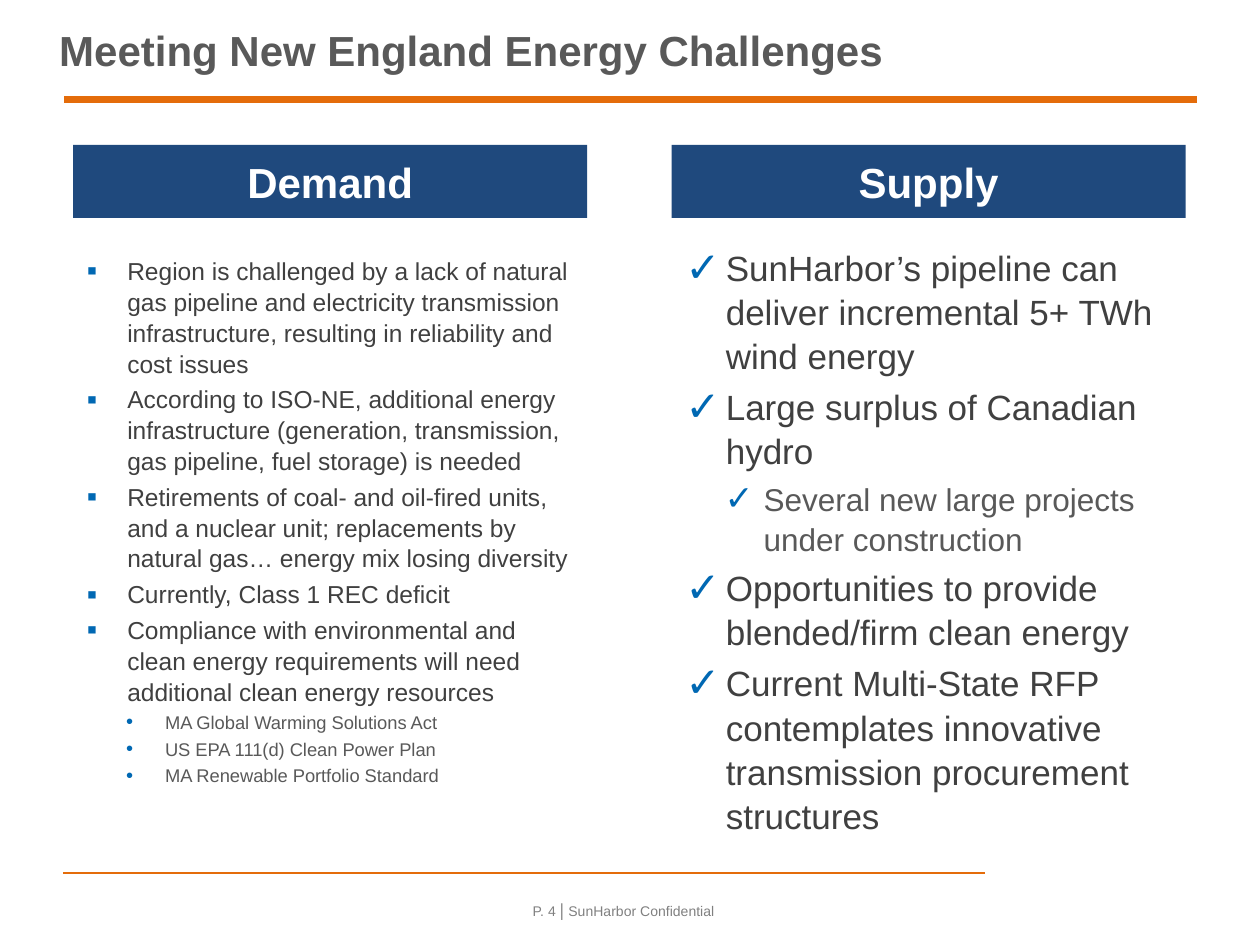
from lxml.etree import SubElement
from pptx import Presentation
from pptx.dml.color import RGBColor
from pptx.enum.shapes import MSO_CONNECTOR as Connector, MSO_SHAPE as Shape
from pptx.enum.text import MSO_ANCHOR as Anchor, MSO_AUTO_SIZE as AutoSize, PP_ALIGN as Align
from pptx.oxml.ns import qn
from pptx.util import Inches, Pt

COLUMNS, ROWS = 100, 75
NAVY, ORANGE, BLUE = "1F497D", "E46C0A", "0068B3"
DARK, MID, PALE, WHITE = "404040", "595959", "808080", "FFFFFF"

DEMAND = [
    (0, "Region is challenged by a lack of natural gas pipeline and electricity transmission infrastructure, resulting in reliability and cost issues"),
    (0, "According to ISO-NE, additional energy infrastructure (generation, transmission, gas pipeline, fuel storage) is needed"),
    (0, "Retirements of coal- and oil-fired units, and a nuclear unit; replacements by natural gas… energy mix losing diversity"),
    (0, "Currently, Class 1 REC deficit"),
    (0, "Compliance with environmental and clean energy requirements will need additional clean energy resources"),
    (1, "MA Global Warming Solutions Act"),
    (1, "US EPA 111(d) Clean Power Plan"),
    (1, "MA Renewable Portfolio Standard"),
]
SUPPLY = [
    (0, "SunHarbor’s pipeline can deliver incremental 5+ TWh wind energy"),
    (0, "Large surplus of Canadian hydro"),
    (1, "Several new large projects under construction"),
    (0, "Opportunities to provide blended/firm clean energy"),
    (0, "Current Multi-State RFP contemplates innovative transmission procurement structures"),
]
LEVELS = [
    {"left": 0.32, "hang": 0.32, "bullet_size": 120, "color": DARK},
    {"left": 0.62, "hang": 0.31, "bullet_size": 110, "color": MID},
]


def rgb(value):
    return RGBColor.from_string(value)


def across(columns):
    return int(Inches(10) * columns / COLUMNS)


def down(rows):
    return int(Inches(7.5) * rows / ROWS)


def grid(left, top, width, height):
    return across(left), down(top), across(width), down(height)


def put(target, values):
    for key, value in values.items():
        setattr(target, key, value)


def style(font, size, color, bold=False, name="Arial"):
    put(font, {"size": Pt(size), "bold": bold, "name": name})
    font.color.rgb = rgb(color)


def place(holder, box):
    put(holder, dict(zip(("left", "top", "width", "height"), box)))


def add_bullet(paragraph, mark, level):
    props = paragraph._p.get_or_add_pPr()
    props.set("marL", str(Inches(level["left"])))
    props.set("indent", str(-Inches(level["hang"])))
    SubElement(SubElement(props, qn("a:buClr")), qn("a:srgbClr"), val=BLUE)
    SubElement(props, qn("a:buSzPct"), val=str(level["bullet_size"] * 1000))
    SubElement(props, qn("a:buFont"), typeface="Arial")
    SubElement(props, qn("a:buChar"), char=mark)


def add_rule(slide, left, right, row, weight):
    rule = slide.shapes.add_connector(
        Connector.STRAIGHT, across(left), down(row), across(right), down(row))
    rule.line.color.rgb = rgb(ORANGE)
    rule.line.width = Pt(weight)
    SubElement(rule._element.spPr, qn("a:effectLst"))


def fill_title(slide, box):
    title = slide.shapes.title
    place(title, box)
    frame = title.text_frame
    put(frame, {"text": "Meeting New England Energy Challenges", "word_wrap": True,
                "auto_size": AutoSize.NONE, "vertical_anchor": Anchor.MIDDLE,
                "margin_left": across(4.7)})
    heading = frame.paragraphs[0]
    heading.alignment = Align.LEFT
    style(heading.runs[0].font, 24, MID, True)


def add_banner(slide, label, box):
    banner = slide.shapes.add_shape(Shape.RECTANGLE, *box)
    banner.shadow.inherit = False
    banner.fill.solid()
    banner.fill.fore_color.rgb = rgb(NAVY)
    banner.line.fill.background()
    put(banner.text_frame, {"text": label, "vertical_anchor": Anchor.MIDDLE})
    heading = banner.text_frame.paragraphs[0]
    heading.alignment = Align.CENTER
    style(heading.runs[0].font, 24, WHITE, True)


def fill_list(body, items, box, marks, sizes):
    place(body, box)
    frame = body.text_frame
    put(frame, {"word_wrap": True, "auto_size": AutoSize.NONE, "vertical_anchor": Anchor.TOP})
    for index, (depth, words) in enumerate(items):
        point = frame.add_paragraph() if index else frame.paragraphs[0]
        size = sizes[depth]
        put(point, {"text": words, "level": depth, "alignment": Align.LEFT,
                    "line_spacing": 1.05,
                    "space_before": Pt(size * 0.2 if index else 0)})
        add_bullet(point, marks[depth], LEVELS[depth])
        style(point.runs[0].font, size, LEVELS[depth]["color"])


def add_footer(slide, box):
    footer = slide.shapes.add_textbox(*box).text_frame
    footer.word_wrap = True
    line = footer.paragraphs[0]
    line.alignment = Align.CENTER
    for words, size, bold, name in (("P. 4 ", 8, False, "Arial"),
                                    ("| ", 10.5, True, "Times New Roman"),
                                    ("SunHarbor Confidential", 8, False, "Arial")):
        run = line.add_run()
        run.text = words
        style(run.font, size, PALE, bold, name)


def main():
    deck = Presentation()
    put(deck, {"slide_width": Inches(10), "slide_height": Inches(7.5)})
    slide = deck.slides.add_slide(deck.slide_layouts[3])
    demand, supply = slide.placeholders[1], slide.placeholders[2]

    add_footer(slide, grid(37.2, 70.8, 24.6, 3.3))
    add_rule(slide, 5, 78.2, 69.3, 1)
    add_rule(slide, 5.1, 95, 7.9, 4)
    fill_title(slide, grid(0, 0, 100, 7.9))
    fill_list(supply, SUPPLY, grid(53.4, 18.9, 43.3, 48), "✓✓", (20, 18))
    fill_list(demand, DEMAND, grid(5.9, 19.7, 40.7, 48), "▪•", (14, 10.5))
    for label, left in (("Demand", 5.8), ("Supply", 53.3)):
        add_banner(slide, label, grid(left, 11.5, 40.8, 5.8))
    deck.save("out.pptx")


if __name__ == "__main__":
    main()
